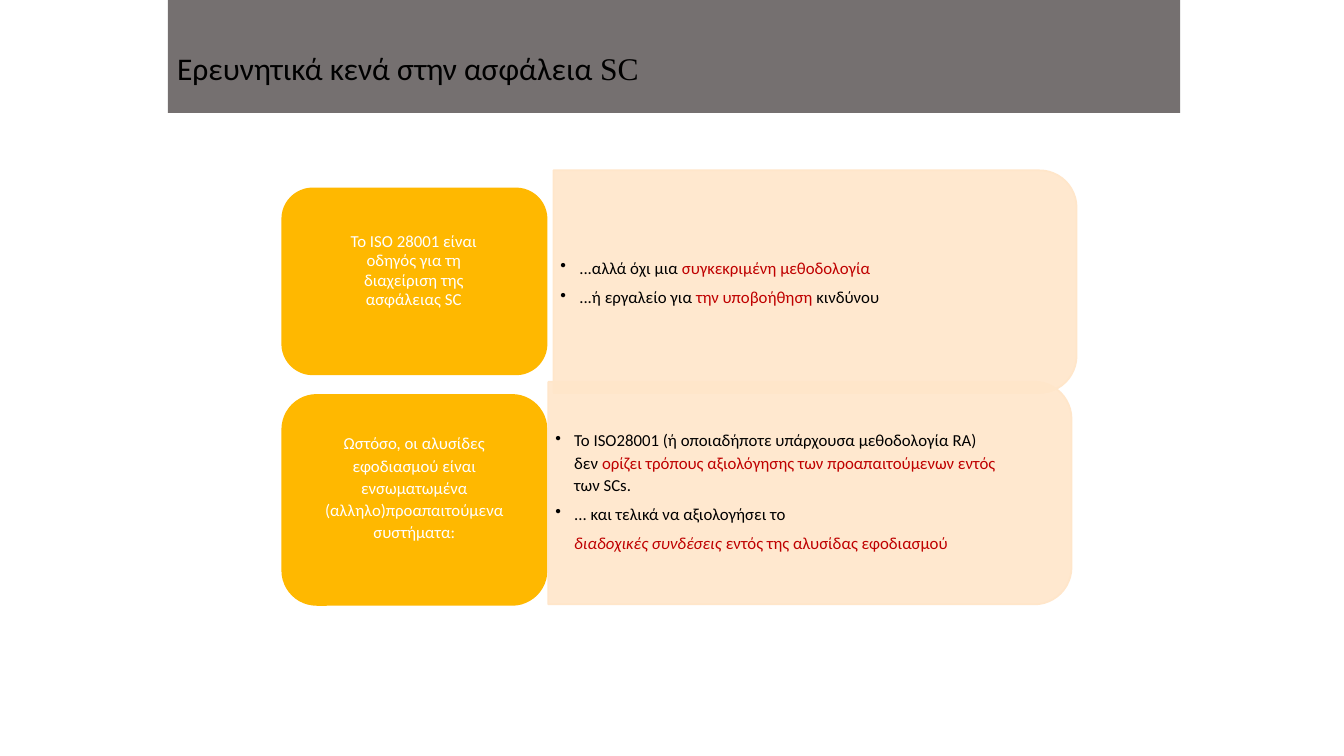
from math import cos, pi, sin

from lxml.etree import SubElement
from pptx import Presentation
from pptx.dml.color import RGBColor
from pptx.enum.shapes import MSO_SHAPE
from pptx.enum.text import PP_ALIGN
from pptx.oxml.ns import qn
from pptx.util import Pt

BLACK, WHITE, RED = "000000", "FFFFFF", "BF0000"
GOLD, PEACH, GRAY = "FFB800", "FFE6CA", "757070"


def paint(part, color):
    part.fill.solid()
    part.fill.fore_color.rgb = RGBColor.from_string(color)


class Board:
    font = "Calibri"
    size = 12
    indent = 14.2

    def __init__(self, slide):
        self.shapes = slide.shapes

    def block(self, kind, box, color):
        shape = self.shapes.add_shape(kind, *map(Pt, box))
        shape.shadow.inherit = False
        paint(shape, color)
        shape.line.fill.background()

    def panel(self, left, top, width, height):
        right, low, curve = left + width, top + height, height / 6
        points = [(left, low), (left, top)]
        for mid, start in ((top + curve, -pi / 2), (low - curve, 0)):
            for step in range(13):
                turn = start + step * pi / 24
                points.append((right - curve + curve * cos(turn),
                               mid + curve * sin(turn)))
        spots = [(Pt(x), Pt(y)) for x, y in points]
        pen = self.shapes.build_freeform(*spots[0], scale=1.0)
        pen.add_line_segments(spots[1:], close=True)
        shape = pen.convert_to_shape()
        shape.shadow.inherit = False
        paint(shape, PEACH)
        tint = shape.fill._xPr.find(qn("a:solidFill"))[0]
        SubElement(tint, qn("a:alpha"), val="89000")
        paint(shape.line, PEACH)
        shape.line.width = Pt(1.25)

    def text(self, box, inset=1):
        frame = self.shapes.add_textbox(*map(Pt, box)).text_frame
        frame.word_wrap = True
        frame.margin_left = frame.margin_right = frame.margin_bottom = 0
        frame.margin_top = Pt(inset)
        return frame

    def style(self, para, color, size=None):
        para.font.name = self.font
        para.font.size = Pt(size or self.size)
        para.font.color.rgb = RGBColor.from_string(color)

    def label(self, box, lines, space, inset):
        para = self.text(box, inset).paragraphs[0]
        para.text = "\v".join(lines)
        para.alignment = PP_ALIGN.CENTER
        para.line_spacing = space
        self.style(para, WHITE)

    def title(self, box, words, code):
        para = self.text(box).paragraphs[0]
        para.add_run().text = words
        tail = para.add_run()
        tail.text = code
        tail.font.name = "Times New Roman"
        self.style(para, BLACK, 22.5)

    def points(self, box, items, inset=1, space=None):
        frame = self.text(box, inset)
        for rank, (gap, dot, runs) in enumerate(items):
            para = frame.add_paragraph() if rank else frame.paragraphs[0]
            if gap:
                para.space_before = Pt(gap)
            if space and not rank:
                para.line_spacing = space
            props = para._p.get_or_add_pPr()
            props.set("marL", str(Pt(self.indent)))
            props.set("indent", str(Pt(-13.5 if dot else 0)))
            if dot:
                tint = SubElement(props, qn("a:buClr"))
                SubElement(tint, qn("a:srgbClr"), val=BLACK)
                SubElement(props, qn("a:buChar"), char="•")
            self.style(para, BLACK)
            for words, color, slant in runs:
                for turn, piece in enumerate(words.split("\v")):
                    if turn:
                        para.add_line_break()
                    run = para.add_run()
                    run.text = piece
                    if color != BLACK:
                        run.font.color.rgb = RGBColor.from_string(color)
                    if slant:
                        run.font.italic = True


def main():
    deck = Presentation()
    deck.slide_width, deck.slide_height = Pt(960), Pt(540)
    board = Board(deck.slides.add_slide(deck.slide_layouts[6]))

    board.panel(395.3, 121.7, 373.7, 159)
    board.block(MSO_SHAPE.ROUNDED_RECTANGLE, (201, 134, 190, 134), GOLD)
    board.block(MSO_SHAPE.RECTANGLE, (120, 0, 723, 80.6), GRAY)
    board.title((126.5, 33.8, 334, 29), "Ερευνητικά κενά στην ασφάλεια ", "SC")
    board.label((237.6, 164.2, 116, 57.6), (
        "Το ISO 28001 είναι", "οδηγός για τη", "διαχείριση της",
        "ασφάλειας SC"), 0.96, 1.5)
    board.points((399.6, 182.9, 287.3, 39), (
        (0, True, (("...αλλά όχι μια ", BLACK, False),
                   ("συγκεκριμένη μεθοδολογία", RED, False))),
        (6.9, True, (("...ή εργαλείο για ", BLACK, False),
                     ("την υποβοήθηση ", RED, False),
                     ("κινδύνου", BLACK, False)))))

    board.block(MSO_SHAPE.ROUNDED_RECTANGLE, (201, 281.5, 190, 151.2), GOLD)
    board.label((216, 306, 160, 69), (
        "Ωστόσο, οι αλυσίδες", "εφοδιασμού είναι", "ενσωματωμένα",
        "(αλληλο)προαπαιτούμενα", "συστήματα:"), 1.1, 2)
    board.panel(391.7, 272.7, 373.7, 159)
    board.points((396, 303.8, 349, 84), (
        (0, True, (
            ("Το ISO28001 (ή οποιαδήποτε υπάρχουσα μεθοδολογία RA)\vδεν ",
             BLACK, False),
            ("ορίζει τρόπους αξιολόγησης των προαπαιτούμενων εντός\v",
             RED, False),
            ("των SCs.", BLACK, False))),
        (6.2, True, (("... και τελικά να αξιολογήσει το", BLACK, False),)),
        (6.5, False, (("διαδοχικές συνδέσεις ", RED, True),
                      ("εντός της αλυσίδας εφοδιασμού", RED, False)))),
        2, 1.1)
    deck.save("out.pptx")


if __name__ == "__main__":
    main()
